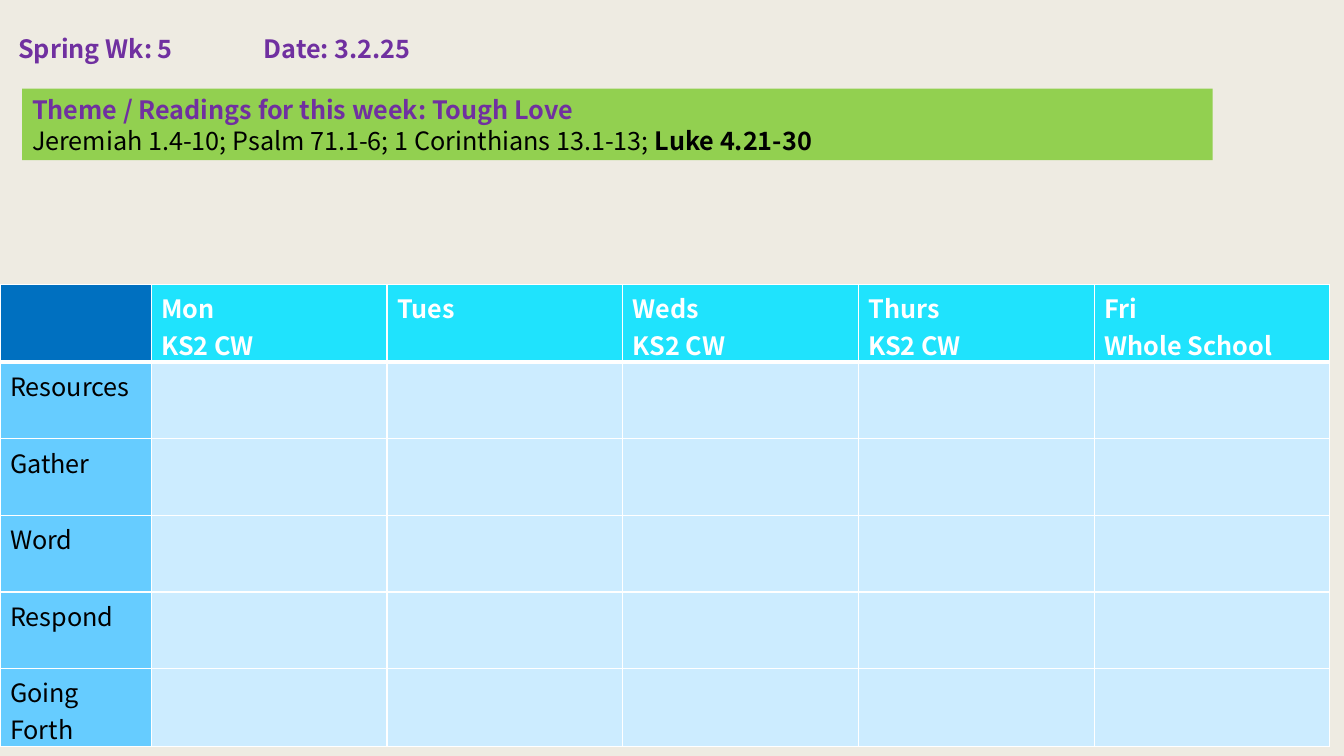
from typing import NamedTuple

from lxml import etree
from pptx import Presentation
from pptx.dml.color import RGBColor
from pptx.enum.shapes import MSO_SHAPE
from pptx.enum.text import MSO_ANCHOR, MSO_AUTO_SIZE, PP_ALIGN
from pptx.oxml.ns import qn
from pptx.util import Pt

RECTANGLE = MSO_SHAPE.RECTANGLE
TOP = MSO_ANCHOR.TOP
NO_AUTOFIT = MSO_AUTO_SIZE.NONE
LEFT = PP_ALIGN.LEFT

FONT = "Noto Sans CJK JP"
PURPLE, BLACK, WHITE = "7030A0", "000000", "FFFFFF"
BACKGROUND, THEME_GREEN = "EEEBE2", "92D050"
CORNER_BLUE, DAY_CYAN = "0070C0", "1FE3FD"
STAGE_BLUE, PLAN_BLUE = "66CCFF", "CCECFF"

STAGE_WIDTH, DAY_WIDTH, ROW_HEIGHT = 108, 168.4, 54.72
BANNER_LINE = 22


class Day(NamedTuple):
    name: str
    group: str = ""


DAYS = [
    Day("Mon", "KS2 CW"),
    Day("Tues"),
    Day("Weds", "KS2 CW"),
    Day("Thurs", "KS2 CW"),
    Day("Fri", "Whole School"),
]
STAGES = ["Resources", "Gather", "Word", "Respond", "Going Forth"]


def rgb(value: str) -> RGBColor:
    return RGBColor.from_string(value)


def add_text(paragraph, text: str, *, color: str = BLACK, bold: bool = False,
             size: float = 18, line: float | None = None) -> None:
    paragraph.alignment = LEFT
    if line:
        paragraph.line_spacing = Pt(line)
    run = paragraph.add_run()
    run.text = text
    run.font.name = FONT
    run.font.size = Pt(size)
    run.font.bold = bold
    run.font.color.rgb = rgb(color)


def prepare_frame(frame) -> None:
    frame.word_wrap = True
    frame.auto_size = NO_AUTOFIT
    frame.vertical_anchor = TOP
    frame.margin_left = frame.margin_right = Pt(7.2)
    frame.margin_top = frame.margin_bottom = Pt(3.6)


def format_cell(cell, fill: str, top: float = 1, bottom: float = 1) -> None:
    cell.margin_bottom = 0
    properties = cell._tc.get_or_add_tcPr()
    for side, width in (("L", 1), ("R", 1), ("T", top), ("B", bottom)):
        border = etree.SubElement(properties, qn(f"a:ln{side}"), w=str(Pt(width)))
        solid = etree.SubElement(border, qn("a:solidFill"))
        etree.SubElement(solid, qn("a:srgbClr"), val=WHITE)
    cell.fill.solid()
    cell.fill.fore_color.rgb = rgb(fill)


def add_week_heading(slide) -> None:
    heading = slide.shapes.title
    heading.left, heading.top = Pt(5.76), Pt(19.44)
    heading.width, heading.height = Pt(934.56), Pt(28.8)
    prepare_frame(heading.text_frame)
    week = heading.text_frame.paragraphs[0]
    tabs = etree.SubElement(week._p.get_or_add_pPr(), qn("a:tabLst"))
    etree.SubElement(tabs, qn("a:tab"), pos=str(Pt(175.5)), algn="l")
    add_text(week, "Spring Wk: 5\tDate: 3.2.25", color=PURPLE, bold=True, line=BANNER_LINE)


def add_theme_banner(slide) -> None:
    banner = slide.shapes.add_shape(RECTANGLE, Pt(15.84), Pt(63.36), Pt(850.32), Pt(51.12))
    banner.shadow.inherit = False
    banner.fill.solid()
    banner.fill.fore_color.rgb = rgb(THEME_GREEN)
    banner.line.fill.background()
    prepare_frame(banner.text_frame)
    theme = banner.text_frame.paragraphs[0]
    add_text(theme, "Theme / Readings for this week: Tough Love",
             color=PURPLE, bold=True, line=BANNER_LINE)
    readings = banner.text_frame.add_paragraph()
    add_text(readings, "Jeremiah 1.4-10; Psalm 71.1-6; 1 Corinthians 13.1-13; ", line=BANNER_LINE)
    add_text(readings, "Luke 4.21-30", bold=True, line=BANNER_LINE)


def add_week_plan(slide) -> None:
    rows, columns = len(STAGES) + 1, len(DAYS) + 1
    plan = slide.shapes.add_table(
        rows, columns, 0, Pt(203.04),
        Pt(STAGE_WIDTH + DAY_WIDTH * len(DAYS)), Pt(ROW_HEIGHT * rows)).table
    for index, column in enumerate(plan.columns):
        column.width = Pt(DAY_WIDTH if index else STAGE_WIDTH)
    for row in plan.rows:
        row.height = Pt(ROW_HEIGHT)

    format_cell(plan.cell(0, 0), CORNER_BLUE, bottom=3)
    for column, day in enumerate(DAYS, 1):
        header = plan.cell(0, column)
        format_cell(header, DAY_CYAN, bottom=3)
        add_text(header.text_frame.paragraphs[0], day.name, color=WHITE, bold=True)
        if day.group:
            add_text(header.text_frame.add_paragraph(), day.group, color=WHITE, bold=True)

    for row, stage in enumerate(STAGES, 1):
        top = 3 if row == 1 else 1
        for column in range(columns):
            format_cell(plan.cell(row, column), PLAN_BLUE if column else STAGE_BLUE, top=top)
        add_text(plan.cell(row, 0).text_frame.paragraphs[0], stage)


def main() -> None:
    presentation = Presentation()
    presentation.slide_width, presentation.slide_height = Pt(960), Pt(540)
    slide = presentation.slides.add_slide(presentation.slide_layouts[5])
    slide.background.fill.solid()
    slide.background.fill.fore_color.rgb = rgb(BACKGROUND)
    add_week_heading(slide)
    add_theme_banner(slide)
    add_week_plan(slide)
    presentation.save("out.pptx")


if __name__ == "__main__":
    main()
